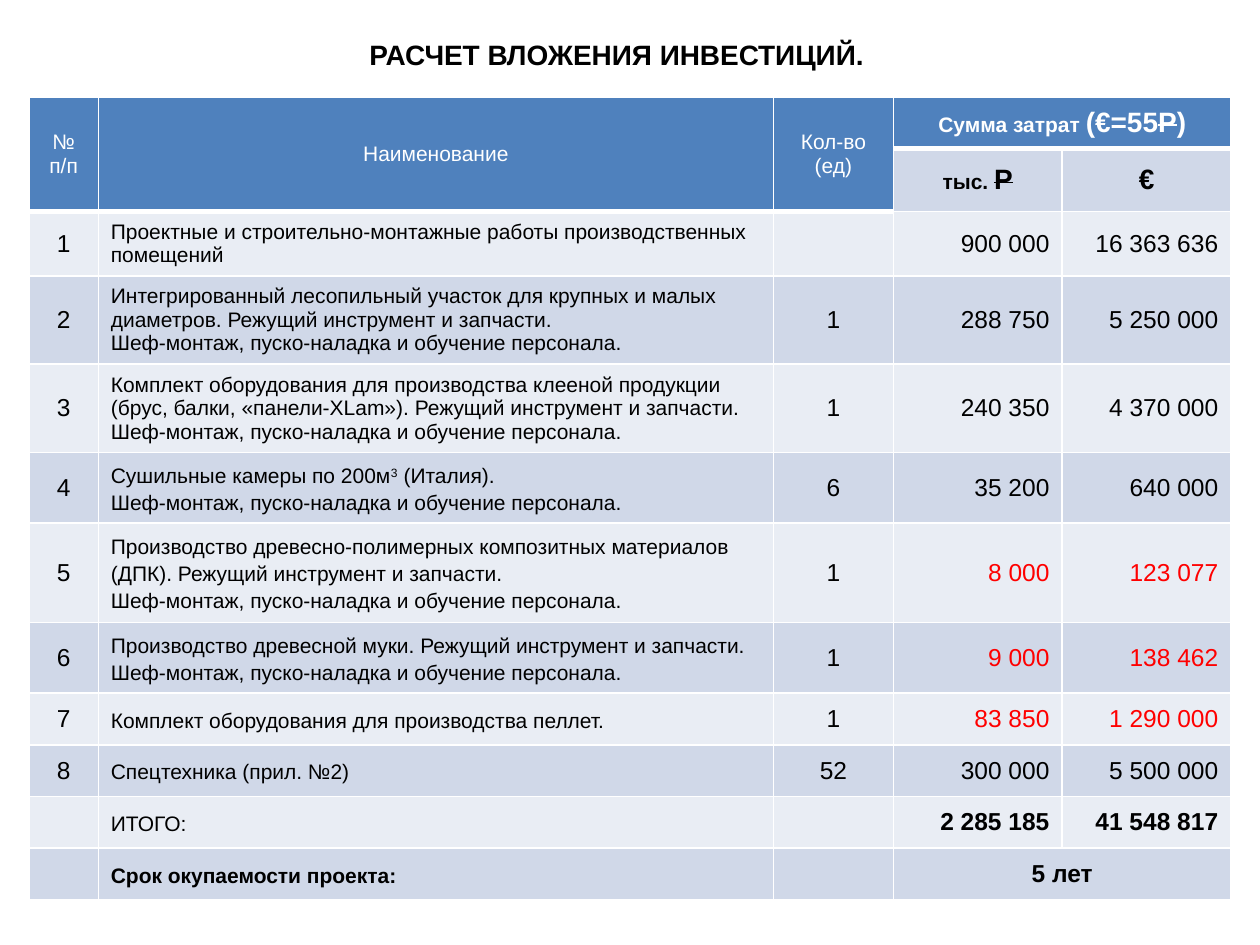
from lxml import etree
from pptx import Presentation
from pptx.dml.color import RGBColor
from pptx.enum import text
from pptx.oxml import ns
from pptx.util import Inches, Pt

BLACK = RGBColor(0x00, 0x00, 0x00)
WHITE = RGBColor(0xFF, 0xFF, 0xFF)
RED = RGBColor(0xFF, 0x00, 0x00)
HEADER = RGBColor(0x4F, 0x81, 0xBD)
BANDS = RGBColor(0xD0, 0xD8, 0xE8), RGBColor(0xE9, 0xED, 0xF4)
LEFT, CENTER, RIGHT = text.PP_ALIGN.LEFT, text.PP_ALIGN.CENTER, text.PP_ALIGN.RIGHT

# Content
TITLE = "РАСЧЕТ ВЛОЖЕНИЯ ИНВЕСТИЦИЙ."
SERVICE = "Шеф-монтаж, пуско-наладка и обучение персонала."
HEADINGS = [["№", "п/п"], ["Наименование"], ["Кол-во (ед)"]]
# Runs of mixed formatting: text, size, extra run attributes
COST_HEADING = [("Сумма затрат ", 12, {}), ("(€=55", 16, {}),
                ("Р", 16, {"strike": "sngStrike"}), (")", 16, {})]
ROUBLE_HEADING = [("тыс. ", 12, {}), ("Р", 16, {"strike": "sngStrike"})]
EURO_HEADING = [("€", 16, {})]
DRYING_KILNS = [("Сушильные камеры по 200м", 12, {}), ("3", 12, {"baseline": "30000"}),
                (" (Италия).", 12, {})]
# Number, name paragraphs, quantity, thousand roubles, euros
ITEMS = [
    ("1", ["Проектные и строительно-монтажные работы производственных помещений"],
     "", "900 000", "16 363 636"),
    ("2", ["Интегрированный лесопильный участок для крупных и малых диаметров. "
           "Режущий инструмент и запчасти.", SERVICE], "1", "288 750", "5 250 000"),
    ("3", ["Комплект оборудования для производства клееной продукции (брус, балки, "
           "«панели-XLam»). Режущий инструмент и запчасти.", SERVICE],
     "1", "240 350", "4 370 000"),
    ("4", [DRYING_KILNS, SERVICE], "6", "35 200", "640 000"),
    ("5", ["Производство древесно-полимерных композитных материалов (ДПК). "
           "Режущий инструмент и запчасти.", SERVICE], "1", "8 000", "123 077"),
    ("6", ["Производство древесной муки. Режущий инструмент и запчасти.", SERVICE],
     "1", "9 000", "138 462"),
    ("7", ["Комплект оборудования для производства пеллет."], "1", "83 850", "1 290 000"),
    ("8", ["Спецтехника (прил. №2)"], "52", "300 000", "5 500 000"),
    ("", ["ИТОГО:"], "", "2 285 185", "41 548 817"),
    ("", ["Срок окупаемости проекта:"], "", "5 лет", ""),
]
RED_ITEMS = ("5", "6", "7")
COLUMN_WIDTHS = [0.55, 5.36, 0.95, 1.34, 1.34]
ROW_HEIGHTS = [0.41, 0.49, 0.51, 0.7, 0.7, 0.56, 0.79, 0.56, 0.41, 0.41, 0.41, 0.41]


def write(frame, paragraphs, size, color, bold=False, align=CENTER, spacing=None):
    """Each paragraph is a string or a list of (text, size, attributes) runs."""
    for index, content in enumerate(paragraphs):
        paragraph = frame.paragraphs[0] if index == 0 else frame.add_paragraph()
        paragraph.alignment = align
        if spacing:
            paragraph.line_spacing = spacing
        runs = [(content, size, {})] if isinstance(content, str) else content
        for words, run_size, attributes in runs:
            run = paragraph.add_run()
            run.text = words
            run.font.name = "Arial"
            run.font.size = Pt(run_size)
            run.font.bold = bold
            run.font.color.rgb = color
            for name, value in attributes.items():
                run.font._element.set(name, value)


def style_cell(cell, fill, sides):
    """Draw white borders on the given sides, then fill the cell."""
    properties = cell._tc.get_or_add_tcPr()
    for side, width in sides.items():
        line = etree.SubElement(properties, ns.qn("a:ln" + side), w=str(Pt(width)))
        solid = etree.SubElement(line, ns.qn("a:solidFill"))
        etree.SubElement(solid, ns.qn("a:srgbClr"), val=str(WHITE))
    cell.fill.solid()
    cell.fill.fore_color.rgb = fill
    cell.vertical_anchor = text.MSO_ANCHOR.MIDDLE


presentation = Presentation()
presentation.slide_width, presentation.slide_height = Inches(10), Inches(7.5)
slide = presentation.slides.add_slide(presentation.slide_layouts[6])

# Title
title = slide.shapes.add_textbox(Inches(2.81), Inches(0.25), Inches(4.17), Inches(0.37))
title.text_frame.word_wrap = False
title.text_frame.auto_size = text.MSO_AUTO_SIZE.SHAPE_TO_FIT_TEXT
title.text_frame.vertical_anchor = text.MSO_ANCHOR.MIDDLE
write(title.text_frame, [TITLE], 16, BLACK, bold=True)

# Table grid
table = slide.shapes.add_table(
    len(ROW_HEIGHTS), len(COLUMN_WIDTHS), Inches(0.23), Inches(0.77),
    Inches(sum(COLUMN_WIDTHS)), Inches(sum(ROW_HEIGHTS))).table
for column, width in zip(table.columns, COLUMN_WIDTHS):
    column.width = Inches(width)
for row, height in zip(table.rows, ROW_HEIGHTS):
    row.height = Inches(height)

# Fills and borders: a thick line closes the header
for r in range(len(ROW_HEIGHTS)):
    for c in range(len(COLUMN_WIDTHS)):
        in_header = r == 0 or (r == 1 and c < 3)
        sides = {"L": 1, "R": 1}
        if r == 0:
            sides["T"] = 1
        sides["B"] = 3 if in_header else 1
        style_cell(table.cell(r, c), HEADER if in_header else BANDS[(r + 1) % 2], sides)

# Header
for c, heading in enumerate(HEADINGS):
    table.cell(0, c).merge(table.cell(1, c))
    write(table.cell(0, c).text_frame, heading, 12, WHITE)
table.cell(0, 3).merge(table.cell(0, 4))
write(table.cell(0, 3).text_frame, [COST_HEADING], 16, WHITE, bold=True)
for c, heading in ((3, ROUBLE_HEADING), (4, EURO_HEADING)):
    write(table.cell(1, c).text_frame, [heading], 16, BLACK, bold=True)

# Items, total and payback period
last = len(ROW_HEIGHTS) - 1
table.cell(last, 3).merge(table.cell(last, 4))
for r, (number, name, quantity, roubles, euros) in enumerate(ITEMS, start=2):
    spacing = 1.15 if r >= 5 else None
    write(table.cell(r, 1).text_frame, name, 12, BLACK, r == last, LEFT, spacing)
    for c, value in ((0, number), (2, quantity), (3, roubles), (4, euros)):
        if value:
            is_money = c >= 3
            write(table.cell(r, c).text_frame, [value], 14,
                  RED if is_money and number in RED_ITEMS else BLACK,
                  bold=is_money and r >= last - 1,
                  align=RIGHT if is_money and r < last else CENTER)

presentation.save("out.pptx")
